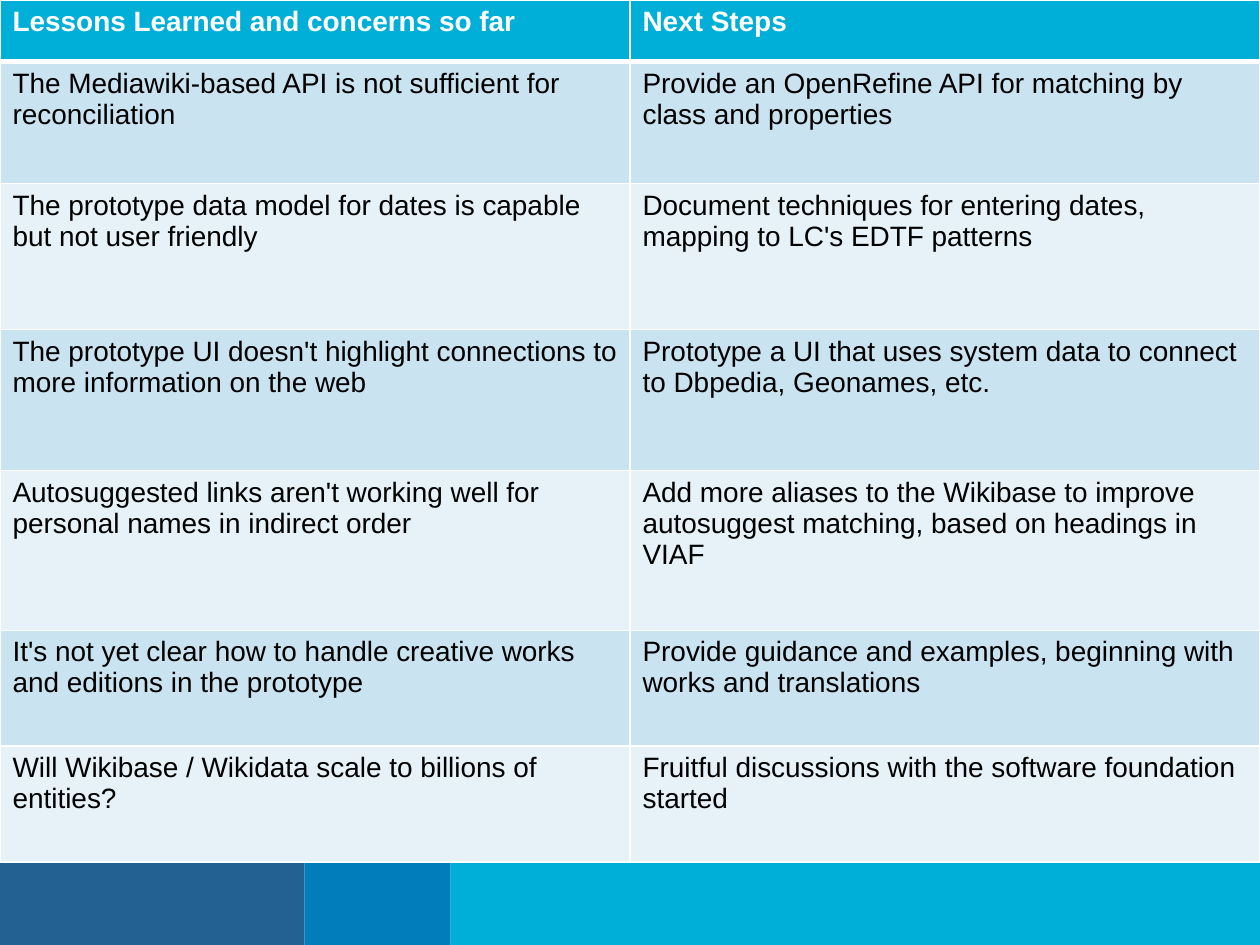
from dataclasses import dataclass

from lxml.etree import SubElement
from pptx import Presentation
from pptx.dml.color import RGBColor
from pptx.enum.shapes import MSO_SHAPE
from pptx.oxml.ns import qn
from pptx.slide import Slide
from pptx.table import Table, _Cell
from pptx.util import Pt


@dataclass(frozen=True)
class Theme:
    navy: str = "236192"
    blue: str = "007DBA"
    cyan: str = "00AFD7"
    odd_row: str = "CAE3F0"
    even_row: str = "E6F2F8"
    white: str = "FFFFFF"
    black: str = "000000"
    font: str = "Arial"
    text_size: float = 16
    thin_rule: float = 1
    thick_rule: float = 3


@dataclass(frozen=True)
class Band:
    width: float
    color: str


@dataclass(frozen=True)
class Row:
    height: float
    lesson: str
    next_step: str


THEME = Theme()
PAGE_WIDTH, PAGE_HEIGHT = 720, 540
FOOTER_HEIGHT = 48

BANDS = [Band(174, THEME.navy), Band(83.5, THEME.blue), Band(462.5, THEME.cyan)]

ROWS = [
    Row(35.3, "Lessons Learned and concerns so far", "Next Steps"),
    Row(69.6, "The Mediawiki-based API is not sufficient for reconciliation",
        "Provide an OpenRefine API for matching by class and properties"),
    Row(83.5, "The prototype data model for dates is capable but not user friendly",
        "Document techniques for entering dates, mapping to LC's EDTF patterns"),
    Row(80.6, "The prototype UI doesn't highlight connections to more information on the web",
        "Prototype a UI that uses system data to connect to Dbpedia, Geonames, etc."),
    Row(91.2, "Autosuggested links aren't working well for personal names in indirect order",
        "Add more aliases to the Wikibase to improve autosuggest matching, "
        "based on headings in VIAF"),
    Row(66.2, "It's not yet clear how to handle creative works and editions in the prototype",
        "Provide guidance and examples, beginning with works and translations"),
    Row(66.2, "Will Wikibase / Wikidata scale to billions of entities?",
        "Fruitful discussions with the software foundation started"),
]


def add_footer(page: Slide, bands: list[Band]) -> None:
    left = 0.0
    for band in bands:
        box = page.shapes.add_shape(
            MSO_SHAPE.RECTANGLE, Pt(left), Pt(PAGE_HEIGHT - FOOTER_HEIGHT),
            Pt(band.width), Pt(FOOTER_HEIGHT))
        box.shadow.inherit = False
        box.fill.solid()
        box.fill.fore_color.rgb = RGBColor.from_string(band.color)
        box.line.fill.background()
        left += band.width


def set_borders(cell: _Cell, header: bool) -> None:
    """Draw white rules; body rows take their top rule from the row above."""
    widths = {"a:lnL": THEME.thin_rule, "a:lnR": THEME.thin_rule}
    if header:
        widths["a:lnT"] = THEME.thin_rule
    widths["a:lnB"] = THEME.thick_rule if header else THEME.thin_rule
    properties = cell._tc.get_or_add_tcPr()
    for tag, width in widths.items():
        line = SubElement(properties, qn(tag), w=str(Pt(width)))
        fill = SubElement(line, qn("a:solidFill"))
        SubElement(fill, qn("a:srgbClr"), val=THEME.white)


def fill_row(table: Table, index: int, row: Row) -> None:
    header = index == 0
    color = THEME.cyan if header else THEME.odd_row if index % 2 else THEME.even_row
    table.rows[index].height = Pt(row.height)
    for column, text in enumerate((row.lesson, row.next_step)):
        cell = table.cell(index, column)
        set_borders(cell, header)
        cell.fill.solid()
        cell.fill.fore_color.rgb = RGBColor.from_string(color)
        cell.text = text
        font = cell.text_frame.paragraphs[0].font
        font.name = THEME.font
        font.size = Pt(THEME.text_size)
        font.bold = header
        font.color.rgb = RGBColor.from_string(THEME.white if header else THEME.black)


def add_lessons_table(page: Slide, rows: list[Row]) -> None:
    height = sum(row.height for row in rows)
    table = page.shapes.add_table(
        len(rows), 2, 0, 0, Pt(PAGE_WIDTH), Pt(height)).table
    for index, row in enumerate(rows):
        fill_row(table, index, row)


def main() -> None:
    deck = Presentation()
    deck.slide_width, deck.slide_height = Pt(PAGE_WIDTH), Pt(PAGE_HEIGHT)
    page = deck.slides.add_slide(deck.slide_layouts[6])
    add_footer(page, BANDS)
    add_lessons_table(page, ROWS)
    deck.save("out.pptx")


if __name__ == "__main__":
    main()
